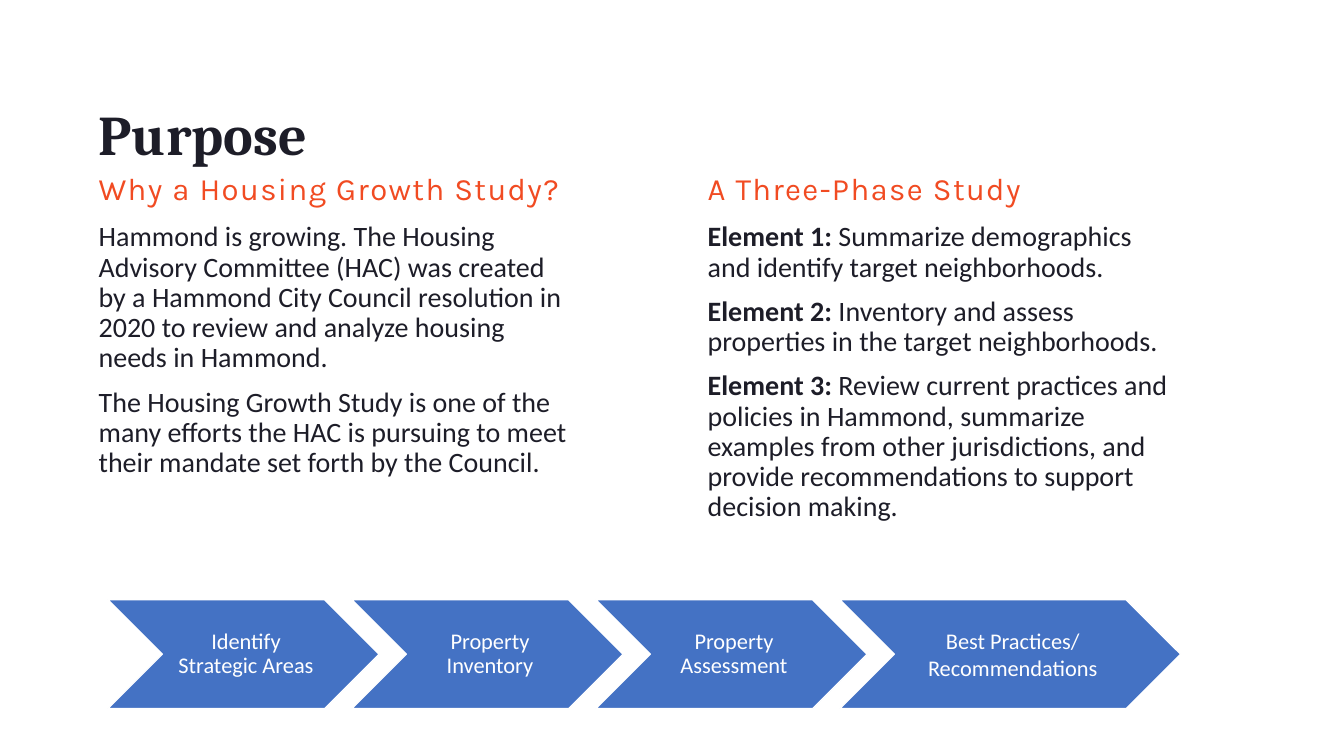
from pptx import Presentation
from pptx.dml.color import RGBColor
from pptx.enum.shapes import MSO_SHAPE as Shape
from pptx.enum.text import MSO_ANCHOR as Anchor, MSO_AUTO_SIZE as AutoSize, PP_ALIGN as Align
from pptx.util import Emu, Pt

PX = 9144  # 100 px to the inch
COLORS = {"ink": "1D1D28", "accent": "F14B22", "step": "4472C4", "white": "FFFFFF"}
TITLE_ONLY = 5

LEFT, RIGHT = 88, 692
COLUMN_WIDTH = 488
STEP_LEFT, STEP_TOP, STEP_HEIGHT, STEP_OVERLAP = 107, 595, 108, 27

COLUMNS = [
    (LEFT, "Why a Housing Growth Study?", [
        ("", "Hammond is growing. The Housing Advisory Committee (HAC) was created by a "
             "Hammond City Council resolution in 2020 to review and analyze housing needs "
             "in Hammond."),
        ("", "The Housing Growth Study is one of the many efforts the HAC is pursuing to "
             "meet their mandate set forth by the Council."),
    ]),
    (RIGHT, "A Three-Phase Study", [
        ("Element 1: ", "Summarize demographics and identify target neighborhoods."),
        ("Element 2: ", "Inventory and assess properties in the target neighborhoods."),
        ("Element 3: ", "Review current practices and policies in Hammond, summarize examples "
                        "from other jurisdictions, and provide recommendations to support "
                        "decision making."),
    ]),
]
# label lines, width, line spacing
STEPS = [
    (["Identify Strategic Areas"], 269, 0.9),
    (["Property Inventory"], 269, 0.9),
    (["Property Assessment"], 269, 0.9),
    (["Best Practices/", "Recommendations"], 338, 1.0),
]


def color(name):
    return RGBColor.from_string(COLORS[name])


def box(*lengths):
    return [Emu(length * PX) for length in lengths]


class PurposeSlide:
    def __init__(self, presentation):
        self.slide = presentation.slides.add_slide(presentation.slide_layouts[TITLE_ONLY])
        self.shapes = self.slide.shapes

    def style(self, paragraph, face, size, ink, spacing, align=Align.LEFT):
        paragraph.alignment = align
        paragraph.line_spacing = spacing
        font = paragraph.font
        font.name, font.size = face, Pt(size)
        font.color.rgb = color(ink)

    def frame(self, left, top, width, height, anchor):
        frame = self.shapes.add_textbox(*box(left, top, width, height)).text_frame
        frame.word_wrap = True
        frame.vertical_anchor = anchor
        return frame

    def title(self, wording, left, top, width, height):
        title = self.shapes.title
        title.left, title.top, title.width, title.height = box(left, top, width, height)
        frame = title.text_frame
        frame.text = wording
        frame.auto_size = AutoSize.NONE
        frame.vertical_anchor = Anchor.BOTTOM
        paragraph = frame.paragraphs[0]
        self.style(paragraph, "Cambria", 40, "ink", 0.9)
        paragraph.font.bold = True

    def heading(self, wording, left, top, width, height):
        paragraph = self.frame(left, top, width, height, Anchor.MIDDLE).paragraphs[0]
        run = paragraph.add_run()
        run.text = wording
        self.style(paragraph, "Karla", 22.2, "accent", 1.1)
        run.font._element.set("spc", "100")

    def body(self, passages, left, top, width, height):
        frame = self.frame(left, top, width, height, Anchor.TOP)
        for index, (lead, wording) in enumerate(passages):
            paragraph = frame.add_paragraph() if index else frame.paragraphs[0]
            if lead:
                lead_run = paragraph.add_run()
                lead_run.text = lead
                lead_run.font.bold = True
            paragraph.add_run().text = wording
            self.style(paragraph, "Calibri", 20, "ink", 0.9)
            if index:
                paragraph.space_before = Pt(10)

    def step(self, lines, spacing, left, top, width, height):
        chevron = self.shapes.add_shape(Shape.CHEVRON, *box(left, top, width, height))
        chevron.shadow.inherit = False
        chevron.fill.solid()
        chevron.fill.fore_color.rgb = color("step")
        chevron.line.color.rgb = color("white")
        chevron.line.width = Pt(1)
        frame = chevron.text_frame
        frame.word_wrap = True
        frame.vertical_anchor = Anchor.MIDDLE
        (frame.margin_left, frame.margin_top,
         frame.margin_right, frame.margin_bottom) = box(7, 2, 2, 2)
        frame.text = "\n".join(lines)
        for paragraph in frame.paragraphs:
            self.style(paragraph, "Calibri", 16, "white", spacing, Align.CENTER)


def main():
    presentation = Presentation()
    presentation.slide_width, presentation.slide_height = box(1333, 750)
    purpose = PurposeSlide(presentation)
    purpose.title("Purpose", LEFT, 26, COLUMN_WIDTH, 145)
    for left, heading, passages in COLUMNS:
        purpose.heading(heading, left, 160, 626, 49)
        purpose.body(passages, left, 216, COLUMN_WIDTH, 335)
    step_left = STEP_LEFT
    for lines, width, spacing in STEPS:
        purpose.step(lines, spacing, step_left, STEP_TOP, width, STEP_HEIGHT)
        step_left += width - STEP_OVERLAP
    presentation.save("out.pptx")


if __name__ == "__main__":
    main()
